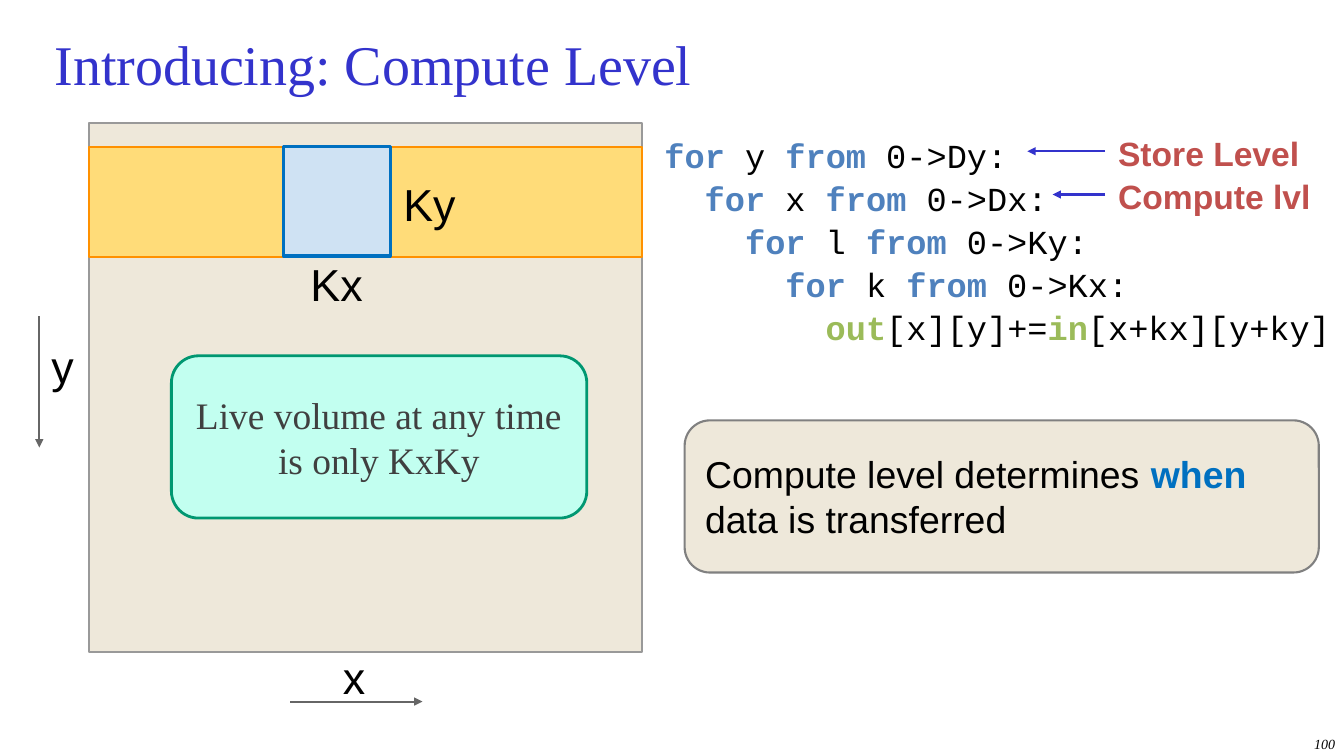
"""Build the slide that introduces the compute level of a loop nest."""
import pptx
import pptx.dml.color
import pptx.enum.shapes
import pptx.enum.text
import pptx.oxml.ns
import pptx.util
from lxml import etree

PX = 9144
SHAPE = pptx.enum.shapes.MSO_SHAPE
ALIGN = pptx.enum.text.PP_ALIGN
MIDDLE = pptx.enum.text.MSO_ANCHOR.MIDDLE
LABEL = {"size": 32, "name": "Arial", "color": "000000"}
LEVEL = {"size": 24, "name": "Arial", "color": "C0504D", "bold": True}
CODE = {"size": 24, "name": "Courier New", "color": "000000"}
KEYWORD = {**CODE, "color": "4F81BD", "bold": True}
ARRAY = {**CODE, "color": "9BBB59", "bold": True}
CLAIM = {"size": 26.7, "name": "Arial", "color": "000000"}
WHEN = {**CLAIM, "color": "0070C0", "bold": True}
VOLUME = {"size": 26.7, "name": "Times New Roman", "color": "404040"}
TITLE = {"size": 40, "name": "Times New Roman", "color": "3333CC"}
NUMBER = {"size": 10, "name": "Times New Roman", "color": "000000", "italic": True}


def rgb(value):
    """Turn a hex string into a colour."""
    return pptx.dml.color.RGBColor.from_string(value)


def emu(*lengths):
    """Turn px lengths into EMU."""
    return [length * PX for length in lengths]


def set_frame(tf, margin=None, anchor=None):
    """Set the wrapping, margins and anchor of a text frame."""
    tf.word_wrap = True
    if anchor is not None:
        tf.vertical_anchor = anchor
    if margin is not None:
        for side in ("left", "top", "right", "bottom"):
            setattr(tf, f"margin_{side}", margin * PX)


def write(p, runs, align=ALIGN.LEFT, spacing=None):
    """Write formatted runs into a paragraph."""
    p.alignment = align
    p.line_spacing = spacing
    for text, formats in runs:
        r = p.add_run()
        r.text = text
        for key, value in formats.items():
            if key == "color":
                r.font.color.rgb = rgb(value)
            else:
                setattr(r.font, key, pptx.util.Pt(value) if key == "size" else value)


def add_box(shapes, kind, box, fill, line, width):
    """Add a filled and outlined preset shape."""
    sp = shapes.add_shape(kind, *emu(*box))
    sp.shadow.inherit = False
    sp.fill.solid()
    sp.fill.fore_color.rgb = rgb(fill)
    sp.line.color.rgb = rgb(line)
    sp.line.width = pptx.util.Pt(width)
    return sp


def add_label(shapes, box, text, formats):
    """Add a text box with one short label."""
    tf = shapes.add_textbox(*emu(*box)).text_frame
    set_frame(tf, 13)
    write(tf.paragraphs[0], [(text, formats)], spacing=1.07)


def add_callout(shapes, box, colors, width, runs, align, margin=None):
    """Add a rounded box with a statement in it."""
    sp = add_box(shapes, SHAPE.ROUNDED_RECTANGLE, box, *colors, width)
    set_frame(sp.text_frame, margin, MIDDLE)
    write(sp.text_frame.paragraphs[0], runs, align)


def add_arrow(shapes, ends, color):
    """Add a straight arrow between two points."""
    line = shapes.add_connector(pptx.enum.shapes.MSO_CONNECTOR.STRAIGHT, *emu(*ends))
    line.line.color.rgb = rgb(color)
    line.line.width = pptx.util.Pt(1.5)
    qn = pptx.oxml.ns.qn
    etree.SubElement(line.line._get_or_add_ln(), qn("a:tailEnd"), type="triangle")
    etree.SubElement(line._element.spPr, qn("a:effectLst"))


def add_code(shapes, box, lines):
    """Add code lines, each indented two characters more than the last."""
    tf = shapes.add_textbox(*emu(*box)).text_frame
    set_frame(tf, 13)
    for depth, runs in enumerate(lines):
        p = tf.add_paragraph() if depth else tf.paragraphs[0]
        write(p, runs, spacing=1.07)
        p._p.get_or_add_pPr().set("marL", str(depth * 40 * PX))


def add_title(s, box, text):
    """Place and format the title."""
    sp = s.shapes.title
    sp.left, sp.top, sp.width, sp.height = emu(*box)
    set_frame(sp.text_frame, 12, MIDDLE)
    write(sp.text_frame.paragraphs[0], [(text, TITLE)])


def add_image_plane(shapes):
    """Add the data plane with its live rows, window and axes."""
    add_box(shapes, SHAPE.RECTANGLE, (88, 122, 549, 525), "EEE8DA", "999999", 1.5)
    add_box(shapes, SHAPE.RECTANGLE, (88, 146, 549, 109), "FFDC79", "FF9100", 1.5)
    window = shapes.add_group_shape().shapes
    add_box(window, SHAPE.RECTANGLE, (281, 145, 106, 109), "CFE2F3", "0070C0", 2.25)
    add_label(window, (387, 159, 163, 60), "Ky", LABEL)
    add_label(window, (295, 238, 163, 60), "Kx", LABEL)
    add_label(shapes, (327, 628, 163, 60), "x", LABEL)
    add_arrow(shapes, (288, 696, 419, 696), "666666")
    add_label(shapes, (38, 319, 163, 60), "y", LABEL)
    add_arrow(shapes, (39, 314, 39, 444), "666666")


def main():
    """Build and save the slide."""
    prs = pptx.Presentation()
    prs.slide_width, prs.slide_height = emu(1333, 750)
    s = prs.slides.add_slide(prs.slide_layouts[5])
    shapes = s.shapes
    add_title(s, (42, 25, 1253, 75), "Introducing: Compute Level")
    add_image_plane(shapes)

    loops = [("y", "Dy"), ("x", "Dx"), ("l", "Ky"), ("k", "Kx")]
    lines = [[("for", KEYWORD), (f" {index} ", CODE), ("from ", KEYWORD), (f"0->{limit}:", CODE)]
             for index, limit in loops]
    lines.append([("out", ARRAY), ("[x][y]+=", CODE), ("in", ARRAY), ("[x+kx][y+ky]", CODE)])
    add_code(shapes, (646, 118, 695, 274), lines)

    for text, top, width, tip in (("Store Level", 116, 220, 1019), ("Compute lvl", 159, 291, 1044)):
        add_label(shapes, (1096, top, width, 74), text, LEVEL)
        add_arrow(shapes, (1096, top + 34, tip, top + 34), "3333CC")

    add_callout(shapes, (170, 353, 412, 161), ("C2FFF0", "009771"), 2,
                [("Live volume at any time is only KxKy", VOLUME)], ALIGN.CENTER)
    add_callout(shapes, (679, 417, 629, 151), ("EEE8DA", "808080"), 1.5,
                [("Compute level determines ", CLAIM), ("when", WHEN),
                 (" data is transferred", CLAIM)], ALIGN.LEFT, 13)

    tf = shapes.add_textbox(*emu(1056, 725, 278, 25)).text_frame
    set_frame(tf)
    write(tf.paragraphs[0], [("100", NUMBER)], ALIGN.RIGHT)
    prs.save("out.pptx")


if __name__ == "__main__":
    main()
